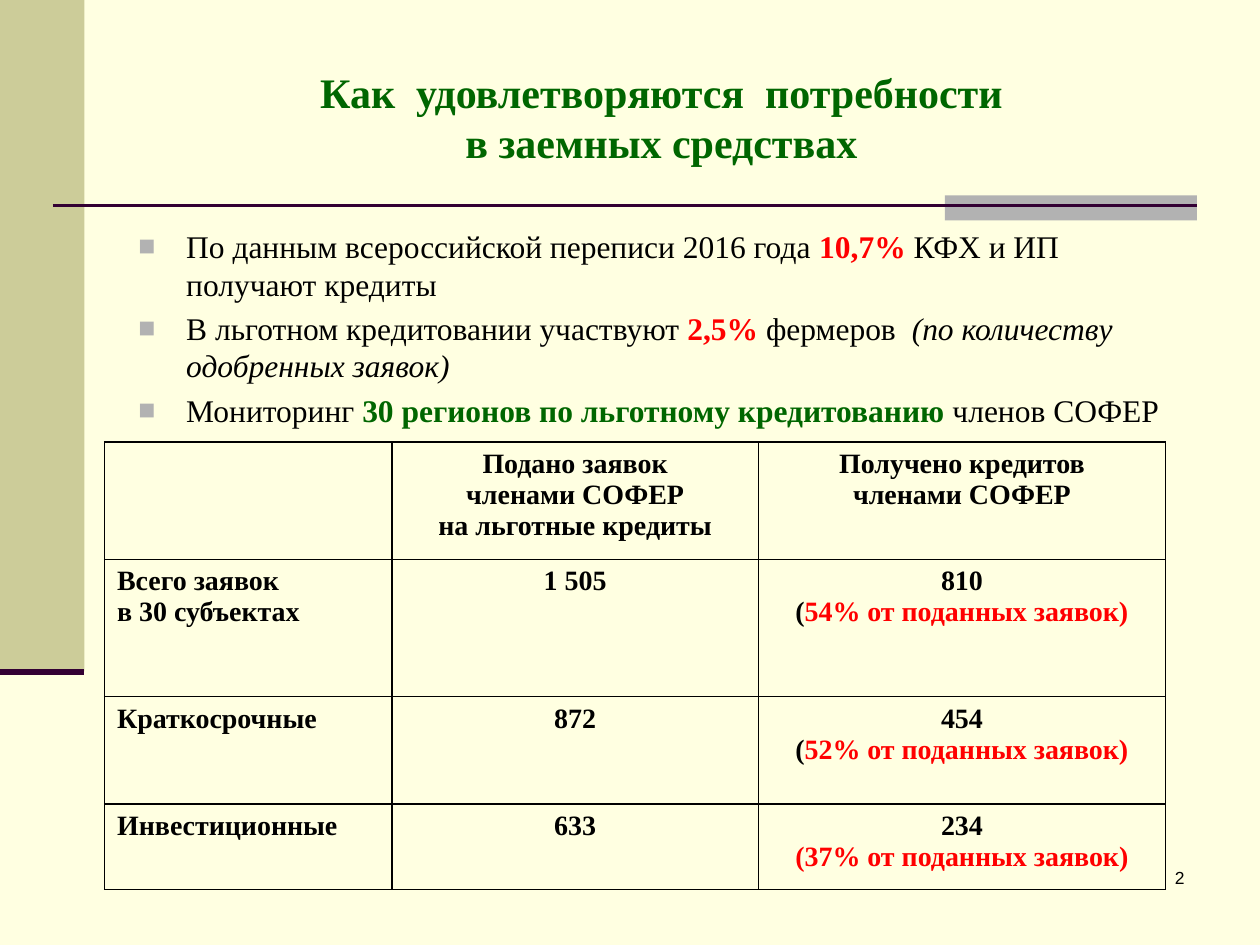
"""Build the slide on how farmers' needs for borrowed funds are met."""
from dataclasses import dataclass

import pptx
import pptx.dml.color
import pptx.enum.shapes
import pptx.enum.text
import pptx.oxml
import pptx.util
from lxml import etree

Inches = pptx.util.Inches
Pt = pptx.util.Pt
Align = pptx.enum.text.PP_ALIGN
Anchor = pptx.enum.text.MSO_ANCHOR
SERIF = "Times New Roman"
BLACK, RED, GREEN = "000000", "FF0000", "006600"
PLUM, GREY, SAND, CREAM = "330033", "B2B2B2", "CCCC99", "FFFFE1"


@dataclass
class Run:
    """A stretch of text in one format."""
    text: str
    ink: str = BLACK
    bold: bool = False
    slant: bool = False


@dataclass
class Bar:
    """A plain filled rectangle."""
    box: tuple[float, float, float, float]
    ink: str


@dataclass
class Rule:
    """A straight line of the frame."""
    start: tuple[float, float]
    end: tuple[float, float]
    width: float


BARS = [Bar((0, 0, 0.67, 5.33), SAND), Bar((7.5, 1.55, 2, 0.2), GREY)]
RULES = [Rule((0.42, 1.63), (9.5, 1.63), 1.5), Rule((0, 5.33), (0.67, 5.33), 3.5)]
TITLE = [[Run("Как  удовлетворяются  потребности\nв заемных средствах", GREEN, True)]]
POINTS = [
    [Run("По данным всероссийской переписи 2016 года "), Run("10,7%", RED, True),
     Run(" КФХ и ИП получают кредиты")],
    [Run("В льготном кредитовании участвуют "), Run("2,5%", RED, True),
     Run(" фермеров "), Run(" (по количеству одобренных заявок)", slant=True)],
    [Run("Мониторинг "), Run("30 регионов по льготному кредитованию ", GREEN, True),
     Run("членов СОФЕР")],
]
COLS = [2.28, 2.91, 3.23]
ROWS = [0.93, 1.09, 0.85, 0.68]


def bold(*lines: str) -> list[list[Run]]:
    """Return one bold black paragraph per line."""
    return [[Run(line, bold=True)] for line in lines]


def share(count: str, rate: int, ink: str = BLACK) -> list[list[Run]]:
    """Return a loan count above its share of applications."""
    note = [Run("(", ink, True), Run(f"{rate}% от поданных заявок)", RED, True)]
    return bold(count) + [note]


GRID = [
    [[], bold("Подано заявок", "членами СОФЕР", "на льготные кредиты"),
     bold("Получено кредитов", "членами СОФЕР")],
    [bold("Всего заявок", "в 30 субъектах"), bold("1 505"), share("810", 54)],
    [bold("Краткосрочные"), bold("872"), share("454", 52)],
    [bold("Инвестиционные"), bold("633"), share("234", 37, RED)],
]


def hue(code: str) -> pptx.dml.color.RGBColor:
    """Turn a hex string into a colour."""
    return pptx.dml.color.RGBColor.from_string(code)


def node(parent, tag: str, **values):
    """Append a DrawingML element with attributes."""
    item = etree.SubElement(parent, pptx.oxml.ns.qn(f"a:{tag}"))
    for name, value in values.items():
        item.set(name, str(value))
    return item


def put(para, part: Run, size: float, font: str) -> None:
    """Add a run to a paragraph, breaking at each newline."""
    look = {"name": font, "size": Pt(size), "bold": part.bold, "italic": part.slant}
    for spot, line in enumerate(part.text.split("\n")):
        if spot:
            para.add_line_break()
        run = para.add_run()
        run.text = line
        for name, value in look.items():
            setattr(run.font, name, value)
        run.font.color.rgb = hue(part.ink)


def write(frame, paras: list[list[Run]], size: float, align, font: str = SERIF,
          **style) -> None:
    """Fill a text frame with formatted paragraphs."""
    for index, runs in enumerate(paras):
        para = frame.add_paragraph() if index else frame.paragraphs[0]
        for name, value in {"alignment": align, **style}.items():
            setattr(para, name, value)
        for part in runs:
            put(para, part, size, font)


def label(slide, box: tuple[float, float, float, float], anchor=Anchor.TOP):
    """Add a wrapping text box and return its frame."""
    frame = slide.shapes.add_textbox(*map(Inches, box)).text_frame
    frame.word_wrap = True
    frame.vertical_anchor = anchor
    return frame


def bullet(para) -> None:
    """Give a paragraph a hanging square bullet."""
    props = para._p.get_or_add_pPr()
    props.set("marL", str(Inches(0.38)))
    props.set("indent", str(-Inches(0.38)))
    node(node(props, "buClr"), "srgbClr", val=GREY)
    node(props, "buSzPct", val=90000)
    node(props, "buFont", typeface="Arial")
    node(props, "buChar", char="■")


def edge(cell) -> None:
    """Draw thin black borders round a cell."""
    props = cell._tc.get_or_add_tcPr()
    for spot, side in enumerate(("lnL", "lnR", "lnT", "lnB")):
        line = node(props, side, w=Pt(1))
        node(node(line, "solidFill"), "srgbClr", val=BLACK)
        props.insert(spot, line)


def block(slide, bar: Bar) -> None:
    """Draw a filled rectangle."""
    shape = slide.shapes.add_shape(
        pptx.enum.shapes.MSO_SHAPE.RECTANGLE, *map(Inches, bar.box))
    shape.shadow.inherit = False
    shape.fill.solid()
    shape.fill.fore_color.rgb = hue(bar.ink)
    shape.line.fill.background()


def stroke(slide, rule: Rule) -> None:
    """Draw a straight line."""
    line = slide.shapes.add_connector(
        pptx.enum.shapes.MSO_CONNECTOR.STRAIGHT,
        *map(Inches, rule.start + rule.end))
    line.line.width = Pt(rule.width)
    line.line.color.rgb = hue(PLUM)
    node(line._element.spPr, "effectLst")


def chart(slide) -> None:
    """Add the table of applications and loans."""
    table = slide.shapes.add_table(
        len(ROWS), len(COLS), Inches(0.83), Inches(3.51),
        Inches(sum(COLS)), Inches(sum(ROWS))).table
    for col, width in zip(table.columns, COLS):
        col.width = Inches(width)
    for row, height, line in zip(table.rows, ROWS, GRID):
        row.height = Inches(height)
        for spot, (cell, paras) in enumerate(zip(row.cells, line)):
            cell.fill.background()
            edge(cell)
            align = Align.CENTER if spot else Align.JUSTIFY
            write(cell.text_frame, paras, 16, align)


def main() -> None:
    """Build and save the slide."""
    deck = pptx.Presentation()
    deck.slide_width, deck.slide_height = Inches(10), Inches(7.5)
    slide = deck.slides.add_slide(deck.slide_layouts[6])
    slide.background.fill.solid()
    slide.background.fill.fore_color.rgb = hue(CREAM)
    for bar in BARS:
        block(slide, bar)
    for rule in RULES:
        stroke(slide, rule)
    write(label(slide, (7.42, 6.83, 2.08, 0.5)), [[Run("2")]], 10, Align.RIGHT, "Arial")
    write(label(slide, (1, 0.3, 8.5, 1.25), Anchor.MIDDLE), TITLE, 24, Align.CENTER)
    body = label(slide, (1, 1.75, 8.5, 4.95))
    write(body, POINTS, 18, Align.LEFT, space_before=Pt(3.6))
    for para in body.paragraphs:
        bullet(para)
    chart(slide)
    deck.save("out.pptx")


if __name__ == "__main__":
    main()
